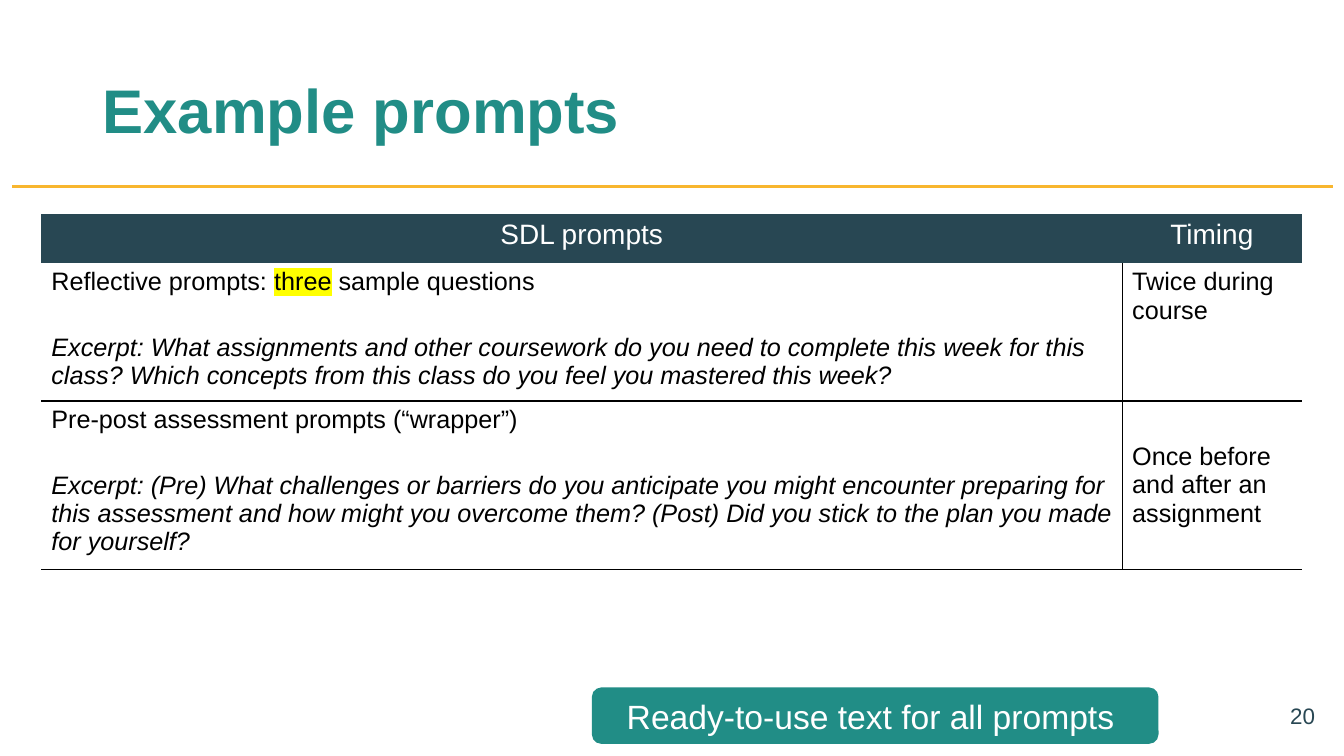
import pptx
import pptx.dml.color
import pptx.enum.shapes
import pptx.enum.text
import pptx.oxml
import pptx.oxml.ns
import pptx.util
from dataclasses import dataclass

Inches, Pt = pptx.util.Inches, pptx.util.Pt
ALIGN = pptx.enum.text.PP_ALIGN
ANCHOR = pptx.enum.text.MSO_ANCHOR
SHAPE = pptx.enum.shapes.MSO_SHAPE
NS = pptx.oxml.ns.nsdecls("a")

TITLE = "Example prompts"
BUTTON = "Ready-to-use text for all prompts "
PAGE = "20"
HEADERS = ["SDL prompts", "Timing"]
# Each row: runs of the prompt as (text, highlighted), excerpt, timing, timing anchor
PROMPTS = [
    ([("Reflective prompts: ", False), ("three", True), (" sample questions", False)],
     "Excerpt: What assignments and other coursework do you need to complete this week "
     "for this class? Which concepts from this class do you feel you mastered this week?",
     "Twice during course", ANCHOR.TOP),
    ([("Pre-post assessment prompts (“wrapper”)", False)],
     "Excerpt: (Pre) What challenges or barriers do you anticipate you might encounter "
     "preparing for this assessment and how might you overcome them? (Post) Did you stick "
     "to the plan you made for yourself?",
     "Once before and after an assignment", ANCHOR.MIDDLE),
]
COL_WIDTHS = [10.72, 1.78]
ROW_HEIGHTS = [0.49, 1.3, 1.58]


@dataclass(frozen=True)
class Theme:
    font: str = "Arial"
    teal: str = "218D86"
    navy: str = "284753"
    gold: str = "F8B62F"
    white: str = "FFFFFF"
    black: str = "000000"
    highlight: str = "FFFF00"
    title: int = 44
    button: int = 24
    header: int = 20
    body: int = 18
    page: int = 16
    gap: float = 2
    excerpt_gap: float = 24.5
    plain_table: str = "{2D5ABB26-0587-4C30-8999-92F81FD0307C}"


T = Theme()


def rgb(color):
    return pptx.dml.color.RGBColor.from_string(color)


def add_run(p, text, size, color, bold=False, italic=False, highlight=False):
    r = p.add_run()
    r.text = text
    r.font.name, r.font.size = T.font, Pt(size)
    r.font.bold, r.font.italic = bold, italic
    r.font.color.rgb = rgb(color)
    if highlight:
        mark = f'<a:highlight {NS}><a:srgbClr val="{T.highlight}"/></a:highlight>'
        fill = r.font._element.find(pptx.oxml.ns.qn("a:solidFill"))
        fill.addnext(pptx.oxml.parse_xml(mark))


def add_label(s, box, text, size, color, align, bold=False):
    sp = s.shapes.add_textbox(*map(Inches, box))
    tf = sp.text_frame
    tf.word_wrap, tf.vertical_anchor = True, ANCHOR.MIDDLE
    p = tf.paragraphs[0]
    p.alignment = align
    add_run(p, text, size, color, bold)
    return p


def set_borders(cell, sides):
    """Draw 1 pt lines on the named sides (L, R, T, B, in that order)."""
    tc_pr = cell._tc.get_or_add_tcPr()
    for i, side in enumerate(sides):
        tc_pr.insert(i, pptx.oxml.parse_xml(
            f'<a:ln{side} {NS} w="12700"><a:solidFill><a:srgbClr val="{T.black}"/>'
            f'</a:solidFill></a:ln{side}>'))


def add_prompt_table(s):
    frame = s.shapes.add_table(len(ROW_HEIGHTS), len(COL_WIDTHS), Inches(0.41), Inches(2.12),
                               Inches(sum(COL_WIDTHS)), Inches(sum(ROW_HEIGHTS)))
    table = frame.table
    table.horz_banding = False
    table._tbl.tblPr.find(pptx.oxml.ns.qn("a:tableStyleId")).text = T.plain_table
    for col, width in zip(table.columns, COL_WIDTHS):
        col.width = Inches(width)
    for row, height in zip(table.rows, ROW_HEIGHTS):
        row.height = Inches(height)

    for i, text in enumerate(HEADERS):
        cell = table.cell(0, i)
        cell.fill.solid()
        cell.fill.fore_color.rgb = rgb(T.navy)
        p = cell.text_frame.paragraphs[0]
        p.alignment = ALIGN.CENTER
        add_run(p, text, T.header, T.white)

    for i, (prompt, excerpt, timing, anchor) in enumerate(PROMPTS, start=1):
        prompt_cell, timing_cell = table.cell(i, 0), table.cell(i, 1)
        top = "T" if i > 1 else ""
        for cell, side in ((prompt_cell, "R"), (timing_cell, "L")):
            cell.fill.background()
            set_borders(cell, side + top + "B")
            cell.text_frame.paragraphs[0].space_after = Pt(T.gap)
        tf = prompt_cell.text_frame
        for text, marked in prompt:
            add_run(tf.paragraphs[0], text, T.body, T.black, highlight=marked)
        p = tf.add_paragraph()
        p.space_before = Pt(T.excerpt_gap)
        add_run(p, excerpt, T.body, T.black, italic=True)
        timing_cell.vertical_anchor = anchor
        add_run(timing_cell.text_frame.paragraphs[0], timing, T.body, T.black)


def add_button(s):
    sp = s.shapes.add_shape(SHAPE.ROUNDED_RECTANGLE, Inches(5.87), Inches(6.82),
                            Inches(5.62), Inches(0.56))
    sp.shadow.inherit = False
    sp.fill.solid()
    sp.fill.fore_color.rgb = rgb(T.teal)
    sp.line.fill.background()
    tf = sp.text_frame
    tf.word_wrap, tf.vertical_anchor = True, ANCHOR.MIDDLE
    p = tf.paragraphs[0]
    p.alignment = ALIGN.CENTER
    add_run(p, BUTTON, T.button, T.white)


def add_rule(s):
    y = Inches(1.85)
    rule = s.shapes.add_connector(pptx.enum.shapes.MSO_CONNECTOR.STRAIGHT,
                                  Inches(0.12), y, Inches(13.22), y)
    rule.line.color.rgb = rgb(T.gold)
    rule.line.width = Pt(1.5)
    rule._element.spPr.append(pptx.oxml.parse_xml(f"<a:effectLst {NS}/>"))


def main():
    prs = pptx.Presentation()
    prs.slide_width, prs.slide_height = Inches(13.33), Inches(7.5)
    s = prs.slides.add_slide(prs.slide_layouts[6])
    add_rule(s)
    add_label(s, (10.14, 6.9, 3, 0.4), PAGE, T.page, T.navy, ALIGN.RIGHT)
    title = add_label(s, (0.92, 0.4, 10.57, 1.45), TITLE, T.title, T.teal, ALIGN.LEFT, bold=True)
    title.line_spacing = 0.9
    add_prompt_table(s)
    add_button(s)
    prs.save("out.pptx")


if __name__ == "__main__":
    main()
